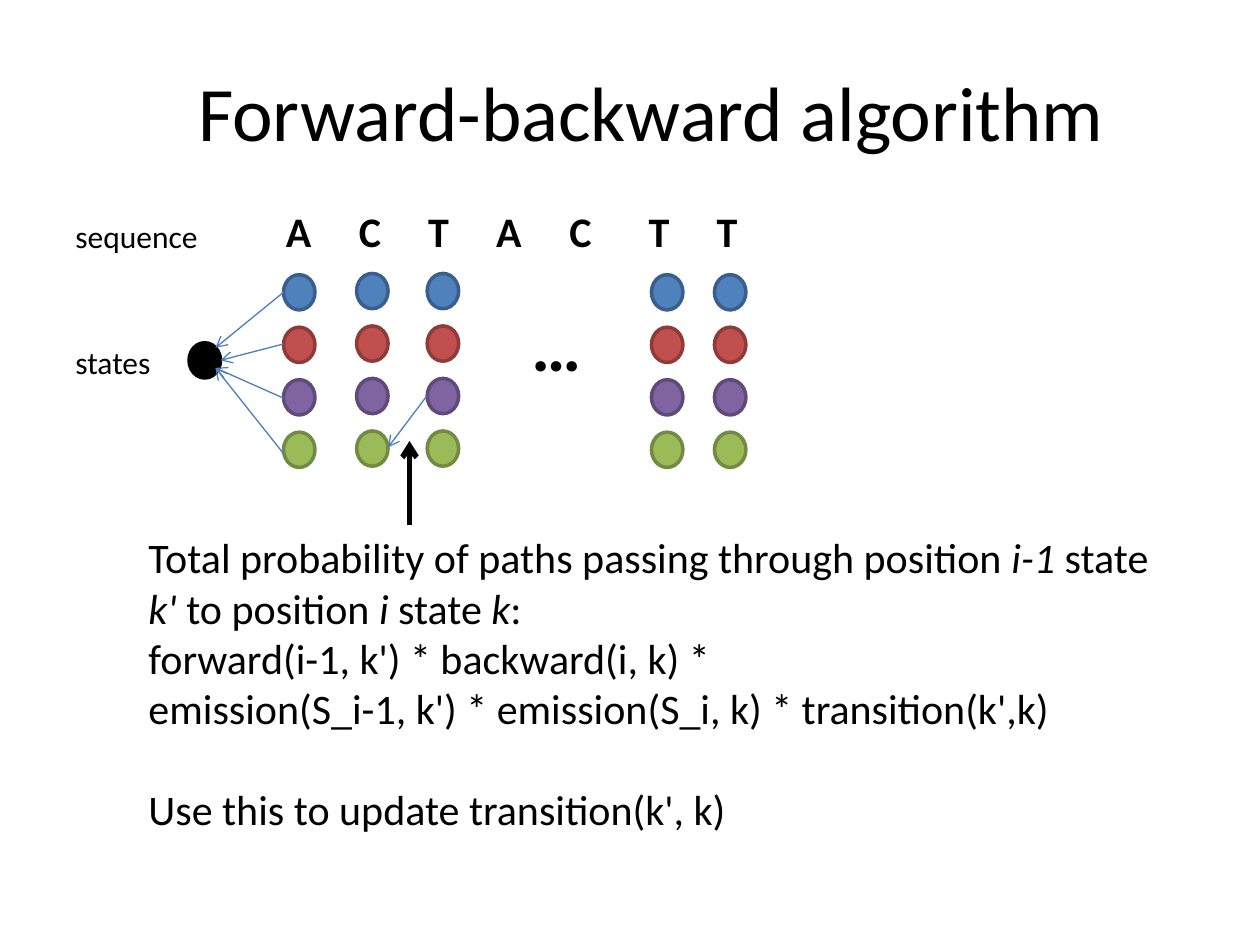
from lxml import etree
from pptx import Presentation
from pptx.dml.color import RGBColor
from pptx.enum.shapes import MSO_CONNECTOR, MSO_SHAPE
from pptx.enum.text import MSO_ANCHOR, MSO_AUTO_SIZE as FIT, PP_ALIGN
from pptx.oxml.ns import qn
from pptx.util import Inches, Pt

FONT = "Calibri"
BLACK = "000000"
ARROW_BLUE = "4B7EBC"
STATE_W, STATE_H = 0.25, 0.28
ROW_PITCH = 1.25 / 3
# Fill and outline of each state, top to bottom
STATE_COLOURS = [("4F81BD", "3A5F8C"), ("C0504D", "8E3B39"),
                 ("8064A2", "5F4A78"), ("9BBB59", "738A42")]
# Left and top of each sequence position
COLUMNS = [(2.25, 2.18), (2.83, 2.17), (3.39, 2.17), (5.17, 2.18), (5.67, 2.18)]
# Distance of each letter after the first from the start of the line
LETTER_STOPS = [0.58, 1.13, 1.67, 2.25, 2.88, 3.42]


def colour(hex_code):
    return RGBColor.from_string(hex_code)


def add_text(slide, box, paragraphs, size, bold=False, align=PP_ALIGN.LEFT,
             anchor=MSO_ANCHOR.TOP, fit=FIT.SHAPE_TO_FIT_TEXT):
    """Each paragraph is a list of (text, italic) runs."""
    frame = slide.shapes.add_textbox(*map(Inches, box)).text_frame
    frame.word_wrap = True
    frame.auto_size = fit
    frame.vertical_anchor = anchor
    for index, runs in enumerate(paragraphs):
        paragraph = frame.add_paragraph() if index else frame.paragraphs[0]
        paragraph.alignment = align
        for text, italic in runs:
            run = paragraph.add_run()
            run.text = text
            run.font.name, run.font.size = FONT, Pt(size)
            run.font.bold, run.font.italic = bold, italic
            run.font.color.rgb = colour(BLACK)
    return frame


def set_tab_stops(paragraph, stops):
    tabs = etree.SubElement(paragraph._p.get_or_add_pPr(), qn("a:tabLst"))
    for stop in stops:
        etree.SubElement(tabs, qn("a:tab"), pos=str(Inches(stop)), algn="l")


def add_state(slide, left, top, fill, outline):
    state = slide.shapes.add_shape(
        MSO_SHAPE.OVAL, *map(Inches, (left, top, STATE_W, STATE_H)))
    state.shadow.inherit = False
    state.fill.solid()
    state.fill.fore_color.rgb = colour(fill)
    state.line.color.rgb = colour(outline)
    state.line.width = Pt(2)


def add_arrow(slide, start, end, hex_code=ARROW_BLUE, width=0.75):
    arrow = slide.shapes.add_connector(
        MSO_CONNECTOR.STRAIGHT, *map(Inches, (*start, *end)))
    arrow.line.color.rgb = colour(hex_code)
    arrow.line.width = Pt(width)
    etree.SubElement(arrow.line._get_or_add_ln(), qn("a:tailEnd"), type="arrow")
    etree.SubElement(arrow._element.spPr, qn("a:effectLst"))


def main():
    prs = Presentation()
    prs.slide_width, prs.slide_height = Inches(10), Inches(7.5)
    slide = prs.slides.add_slide(prs.slide_layouts[6])

    # Title
    add_text(slide, (0.67, 0.25, 9, 1.25), [[("Forward-backward algorithm", False)]],
             44, align=PP_ALIGN.CENTER, anchor=MSO_ANCHOR.MIDDLE, fit=FIT.NONE)

    # Sequence letters and row labels
    letters = add_text(slide, (2.17, 1.58, 4.5, 0.5),
                       [[("\t".join("ACTACTT"), False)]], 24, bold=True)
    set_tab_stops(letters.paragraphs[0], LETTER_STOPS)
    for label, top in (("sequence", 1.67), ("states", 2.67)):
        add_text(slide, (0.5, top, 1.33, 0.44), [[(label, False)]], 18)

    # Grid of states, with the skipped positions between
    for left, top in COLUMNS:
        for row, (fill, outline) in enumerate(STATE_COLOURS):
            add_state(slide, left, top + row * ROW_PITCH, fill, outline)
    add_text(slide, (3.83, 2.34, 1.17, 0.85), [[("…", False)]], 40,
             bold=True, align=PP_ALIGN.CENTER)

    # Start state and the arrows back to it
    add_state(slide, 1.5, 2.72, BLACK, BLACK)
    for start_y, end in ((2.32, (1.71, 2.76)), (2.73, (1.75, 2.86)),
                         (3.16, (1.71, 2.92)), (3.6, (1.71, 2.92))):
        add_arrow(slide, (2.25, start_y), end)

    # The transition in question and its pointer
    add_arrow(slide, (3.39, 3.14), (3.08, 3.55))
    add_arrow(slide, (3.25, 4.17), (3.25, 3.5), BLACK, 3)

    # Explanation
    explanation = add_text(slide, (1.08, 4.17, 8.42, 2.52), [
        [("Total probability of paths passing through position ", False),
         ("i-1", True), (" state ", False), ("k'", True),
         (" to position ", False), ("i", True), (" state ", False),
         ("k", True), (":", False)],
        [("forward(i-1, k') * backward(i, k) *", False)],
        [("emission(S_i-1, k') * emission(S_i, k) * transition(k',k)", False)],
        [("Use this to update transition(k', k)", False)],
    ], 24)
    explanation.paragraphs[-1].space_before = Pt(29)

    prs.save("out.pptx")


if __name__ == "__main__":
    main()
